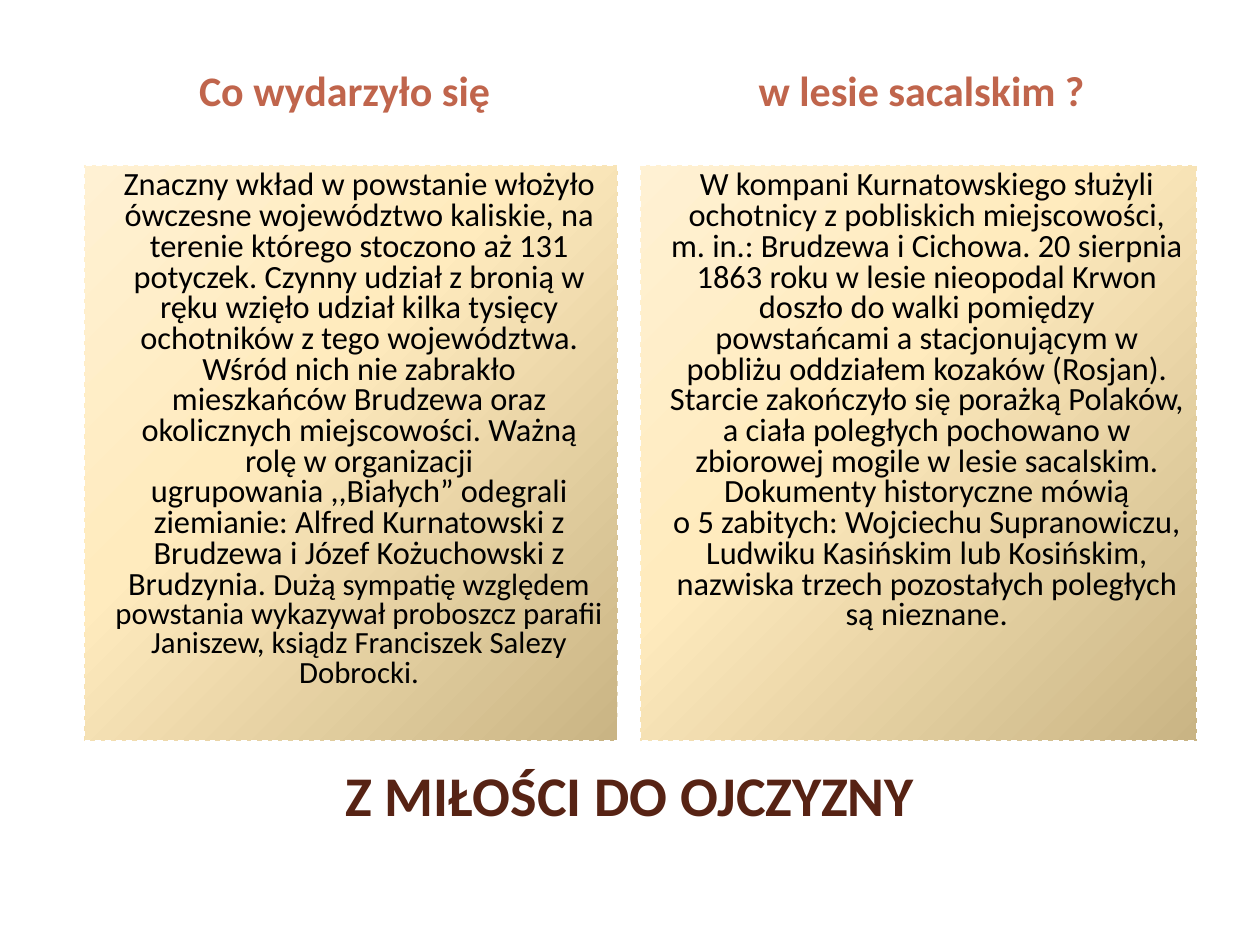
from lxml import etree
from pptx import Presentation
from pptx.dml.color import RGBColor
from pptx.enum.dml import MSO_LINE
from pptx.enum.text import MSO_ANCHOR, MSO_AUTO_SIZE, PP_ALIGN
from pptx.oxml import parse_xml
from pptx.oxml.ns import nsdecls, qn
from pptx.util import Inches, Pt

CENTER = PP_ALIGN.CENTER
MIDDLE, TOP = MSO_ANCHOR.MIDDLE, MSO_ANCHOR.TOP
NO_AUTOFIT = MSO_AUTO_SIZE.NONE
DASH = MSO_LINE.DASH

COMPARISON_LAYOUT = 4
FONT = "Calibri"
COLORS = {
    "title": "572314",
    "heading": "C0654C",
    "text": "000000",
    "white": "FFFFFF",
}
PANEL_STOPS = [(0, "FFF1D3"), (40, "FFEBBE"), (100, "C9B484")]

TITLE = "Z MIŁOŚCI DO OJCZYZNY"
HEADINGS = ["Co wydarzyło się", "w lesie sacalskim ?"]
UPRISING = (
    "Znaczny wkład w powstanie włożyło ówczesne województwo kaliskie, na terenie "
    "którego stoczono aż 131 potyczek. Czynny udział z bronią w ręku wzięło udział "
    "kilka tysięcy ochotników z tego województwa. Wśród nich nie zabrakło mieszkańców "
    "Brudzewa oraz okolicznych miejscowości. Ważną rolę w organizacji "
    "ugrupowania ,,Białych” odegrali ziemianie: Alfred Kurnatowski z Brudzewa "
    "i Józef Kożuchowski z Brudzynia. "
)
PRIEST = (
    "Dużą sympatię względem powstania wykazywał proboszcz parafii Janiszew, "
    "ksiądz Franciszek Salezy Dobrocki."
)
BATTLE = (
    "W kompani Kurnatowskiego służyli ochotnicy z pobliskich miejscowości, "
    "m. in.: Brudzewa i Cichowa. 20 sierpnia 1863 roku w lesie nieopodal Krwon doszło "
    "do walki pomiędzy powstańcami a stacjonującym w pobliżu oddziałem kozaków (Rosjan). "
    "Starcie zakończyło się porażką Polaków, a ciała poległych pochowano w zbiorowej "
    "mogile w lesie sacalskim. Dokumenty historyczne mówią\v"
    "o 5 zabitych: Wojciechu Supranowiczu, Ludwiku Kasińskim lub Kosińskim, "
    "nazwiska trzech pozostałych poległych są nieznane."
)


class SlideBuilder:
    def __init__(self, slide):
        self.slide = slide

    def place(self, index, box, anchor):
        holder = self.slide.placeholders[index]
        holder.left, holder.top, holder.width, holder.height = map(Inches, box)
        frame = holder.text_frame
        frame.word_wrap = True
        frame.auto_size = NO_AUTOFIT
        frame.vertical_anchor = anchor
        return holder

    def set_text(self, holder, parts, color, bold=False, indent=0, spacing=1.0):
        """Fill one centred paragraph with (text, size) parts."""
        paragraph = holder.text_frame.paragraphs[0]
        properties = paragraph._p.get_or_add_pPr()
        properties.set("marL", str(Inches(indent)))
        properties.set("indent", "0")
        etree.SubElement(properties, qn("a:buNone"))
        paragraph.alignment = CENTER
        paragraph.line_spacing = spacing
        paragraph.space_before = Pt(0)
        paragraph.text = parts[0][0]
        for text, _ in parts[1:]:
            paragraph.add_run().text = text
        sizes = [size for _, size in parts]
        for number, run in enumerate(paragraph.runs):
            run.font.name = FONT
            run.font.size = Pt(sizes[min(number, len(sizes) - 1)])
            run.font.bold = bold
            run.font.color.rgb = RGBColor.from_string(COLORS[color])

    def outline(self, holder):
        holder.line.color.rgb = RGBColor.from_string(COLORS["white"])
        holder.line.width = Pt(0.85)

    def title(self, text, box):
        self.set_text(self.place(0, box, MIDDLE), [(text, 32)], "title", bold=True)

    def heading(self, index, text, box):
        holder = self.place(index, box, MIDDLE)
        holder.fill.solid()
        holder.fill.fore_color.rgb = RGBColor.from_string(COLORS["white"])
        self.outline(holder)
        self.set_text(holder, [(text, 24)], "heading", bold=True, indent=0.07)

    def panel(self, index, parts, box):
        holder = self.place(index, box, TOP)
        stops = "".join(
            f'<a:gs pos="{percent * 1000}"><a:srgbClr val="{color}"/></a:gs>'
            for percent, color in PANEL_STOPS
        )
        gradient = parse_xml(
            f'<a:gradFill {nsdecls("a")} rotWithShape="1"><a:gsLst>{stops}</a:gsLst>'
            '<a:path path="circle"><a:fillToRect l="-24000" t="-20000" '
            'r="124000" b="120000"/></a:path></a:gradFill>'
        )
        holder._element.spPr.append(gradient)
        self.outline(holder)
        holder.line.dash_style = DASH
        self.set_text(holder, parts, "text", indent=0.13, spacing=0.79)


def main():
    presentation = Presentation()
    presentation.slide_width, presentation.slide_height = Inches(10), Inches(7.5)
    layout = presentation.slide_layouts[COMPARISON_LAYOUT]
    builder = SlideBuilder(presentation.slides.add_slide(layout))

    builder.title(TITLE, (0.5, 5.72, 9, 1.17))
    for index, text, left in zip((1, 3), HEADINGS, (0.5, 5.08)):
        builder.heading(index, text, (left, 0.36, 4.4, 0.7))
    builder.panel(2, [(UPRISING, 18.5), (PRIEST, 17.6)], (0.67, 1.31, 4.23, 4.57))
    builder.panel(4, [(BATTLE, 18.5)], (5.08, 1.31, 4.42, 4.57))

    presentation.save("out.pptx")


if __name__ == "__main__":
    main()
